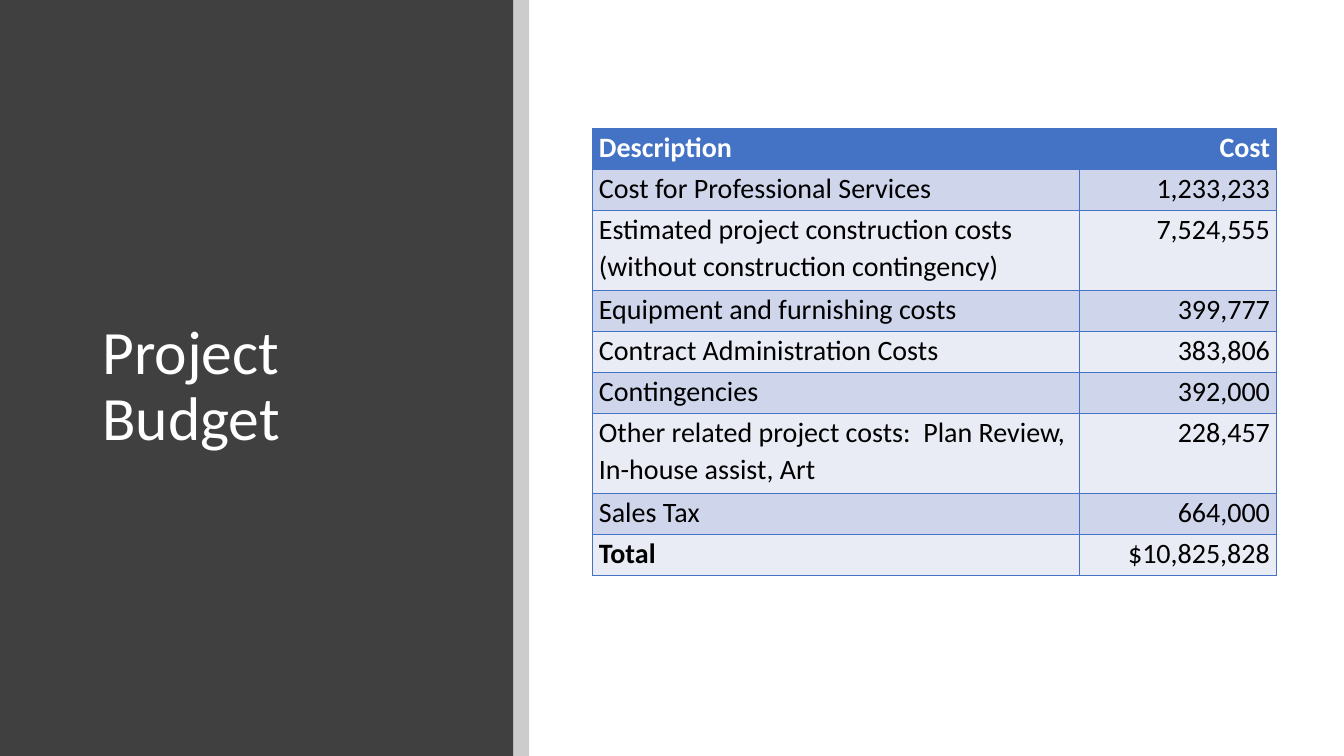
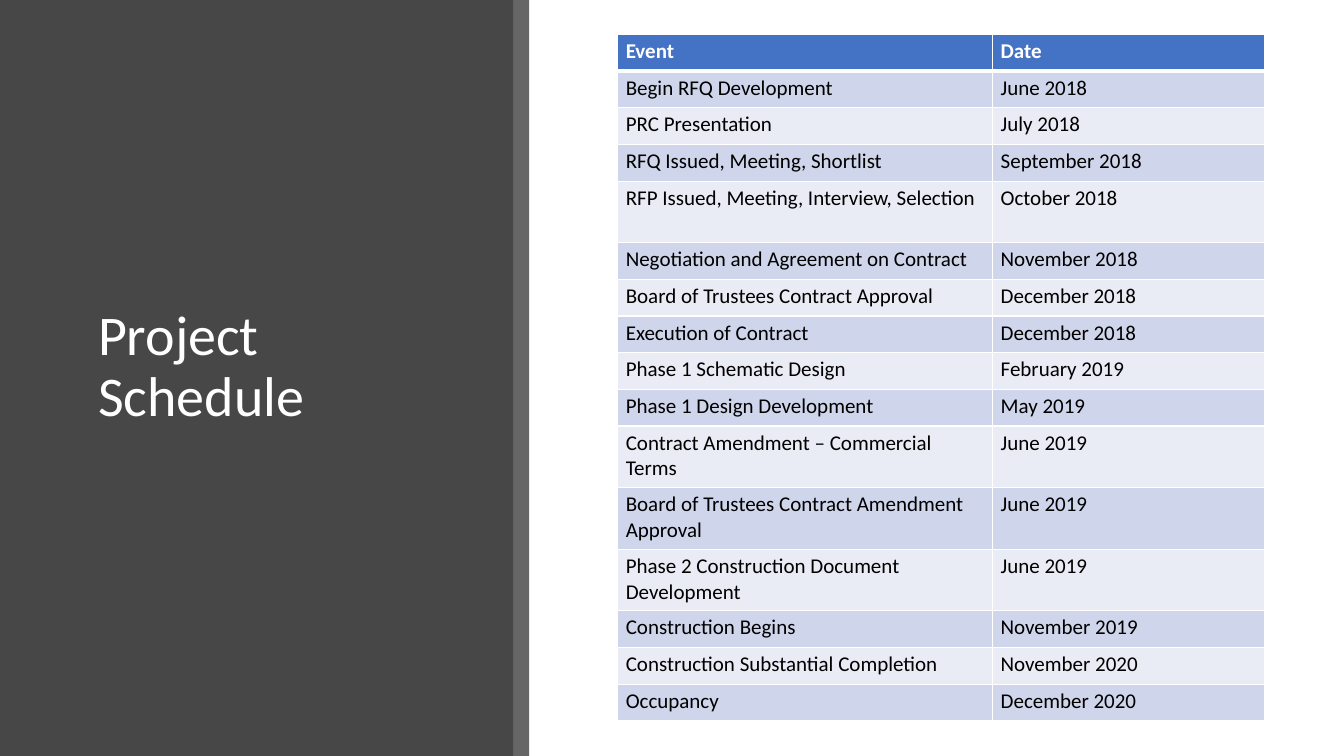
from lxml import etree
from pptx import Presentation
from pptx.dml.color import RGBColor
from pptx.enum.shapes import MSO_SHAPE
from pptx.enum.text import MSO_ANCHOR, PP_ALIGN
from pptx.oxml.ns import qn
from pptx.util import Pt

RECT = MSO_SHAPE.RECTANGLE
MIDDLE, BOTTOM = MSO_ANCHOR.MIDDLE, MSO_ANCHOR.BOTTOM
LEFT, RIGHT = PP_ALIGN.LEFT, PP_ALIGN.RIGHT

SLIDE_W, SLIDE_H = 960, 540
PANEL_W, STRIP_W = 366.5, 11.5

BUDGET = [
    ("Description", "Cost"),
    ("Cost for Professional Services", "1,233,233"),
    ("Estimated project construction costs (without construction contingency)", "7,524,555"),
    ("Equipment and furnishing costs", "399,777"),
    ("Contract Administration Costs", "383,806"),
    ("Contingencies", "392,000"),
    ("Other related project costs:  Plan Review, In-house assist, Art", "228,457"),
    ("Sales Tax", "664,000"),
    ("Total", "$10,825,828"),
]

SCHEDULE = [
    ("Event", "Date"),
    ("Begin RFQ Development", "June 2018"),
    ("PRC Presentation", "July 2018"),
    ("RFQ Issued, Meeting, Shortlist", "September 2018"),
    ("RFP Issued, Meeting, Interview, Selection", "October 2018"),
    ("Negotiation and Agreement on Contract", "November 2018"),
    ("Board of Trustees Contract Approval", "December 2018"),
    ("Execution of Contract", "December 2018"),
    ("Phase 1 Schematic Design", "February 2019"),
    ("Phase 1 Design Development", "May 2019"),
    ("Contract Amendment – Commercial Terms", "June 2019"),
    ("Board of Trustees Contract Amendment Approval", "June 2019"),
    ("Phase 2 Construction Document Development", "June 2019"),
    ("Construction Begins", "November 2019"),
    ("Construction Substantial Completion", "November 2020"),
    ("Occupancy", "December 2020"),
]


def rgb(color):
    return RGBColor.from_string(color)


class Deck:
    FONT = "Calibri"
    WHITE, BLACK, PANEL, ACCENT = "FFFFFF", "000000", "404040", "4472C4"
    BANDS = ("E9EBF5", "CFD5EA")

    def __init__(self):
        self.prs = Presentation()
        self.prs.slide_width, self.prs.slide_height = Pt(SLIDE_W), Pt(SLIDE_H)
        self.s = None

    def new_slide(self):
        self.s = self.prs.slides.add_slide(self.prs.slide_layouts[6])

    def band(self, left, width, color, opacity=100):
        """Full-height rectangle; opacity in percent."""
        sp = self.s.shapes.add_shape(RECT, Pt(left), 0, Pt(width), Pt(SLIDE_H))
        sp.shadow.inherit = False
        sp.line.fill.background()
        sp.fill.solid()
        sp.fill.fore_color.rgb = rgb(color)
        if opacity < 100:
            clr = sp.fill._xPr.find(".//" + qn("a:srgbClr"))
            etree.SubElement(clr, qn("a:alpha"), val=str(opacity * 1000))

    def style(self, p, size, color, bold=False, spacing=1.0, align=LEFT):
        p.font.name, p.font.size, p.font.bold = self.FONT, Pt(size), bold
        p.font.color.rgb = rgb(color)
        p.line_spacing, p.alignment = spacing, align

    def title(self, text, left, top, width, height, size, anchor):
        sp = self.s.shapes.add_textbox(Pt(left), Pt(top), Pt(width), Pt(height))
        tf = sp.text_frame
        tf.word_wrap, tf.vertical_anchor = True, anchor
        p = tf.paragraphs[0]
        p.text = text
        self.style(p, size, self.WHITE, spacing=0.9)

    def borders(self, cell, color, top=1, bottom=1):
        tc_pr = cell._tc.get_or_add_tcPr()
        for side, width in (("L", 1), ("R", 1), ("T", top), ("B", bottom)):
            ln = etree.SubElement(tc_pr, qn("a:ln" + side), w=str(Pt(width)))
            fill = etree.SubElement(ln, qn("a:solidFill"))
            etree.SubElement(fill, qn("a:srgbClr"), val=color)

    def table(self, rows, left, top, col_widths, row_h, tall_h, tall_rows, size,
              border, margins, header_rule=1, spacing=1.0, last_align=LEFT,
              bold_labels=()):
        """Banded two-column table; margins are (horizontal, vertical)."""
        heights = [tall_h if i in tall_rows else row_h for i in range(len(rows))]
        tbl = self.s.shapes.add_table(
            len(rows), len(col_widths), Pt(left), Pt(top),
            Pt(sum(col_widths)), Pt(sum(heights))).table
        tbl.first_row = tbl.horz_banding = False
        for col, width in zip(tbl.columns, col_widths):
            col.width = Pt(width)
        for i, values in enumerate(rows):
            tbl.rows[i].height = Pt(heights[i])
            header = i == 0
            for j, text in enumerate(values):
                cell = tbl.cell(i, j)
                self.borders(cell, border,
                             top=header_rule if i == 1 else 1,
                             bottom=header_rule if header else 1)
                cell.fill.solid()
                cell.fill.fore_color.rgb = rgb(self.ACCENT if header else self.BANDS[i % 2])
                cell.margin_left = cell.margin_right = Pt(margins[0])
                cell.margin_top = cell.margin_bottom = Pt(margins[1])
                p = cell.text_frame.paragraphs[0]
                p.text = text
                self.style(p, size, self.WHITE if header else self.BLACK,
                           header or text in bold_labels, spacing,
                           last_align if j == len(values) - 1 else LEFT)


def budget_slide(deck):
    deck.new_slide()
    deck.band(0, PANEL_W, deck.PANEL)
    deck.title("Project Budget", 66, 64, 263, 425.5, 44, MIDDLE)
    deck.band(PANEL_W, STRIP_W, deck.BLACK, 20)
    deck.table(BUDGET, 423.2, 91.8, (348, 140.6), 29.3, 57.2, (2, 6), 20,
               deck.ACCENT, (4.6, 0), spacing=1.07, last_align=RIGHT,
               bold_labels=("Total",))


def schedule_slide(deck):
    deck.new_slide()
    deck.band(0, PANEL_W + STRIP_W, deck.BLACK, 60)
    deck.band(0, PANEL_W, deck.PANEL, 80)
    deck.title("Project Schedule", 63, 88.5, 263.5, 221, 40, BOTTOM)
    deck.table(SCHEDULE, 441.2, 24.6, (267.8, 194.2), 26.2, 44, (4, 10, 11, 12), 15,
               deck.WHITE, (5.8, 2.9), header_rule=3)


def main():
    deck = Deck()
    budget_slide(deck)
    schedule_slide(deck)
    deck.prs.save("out.pptx")


if __name__ == "__main__":
    main()
